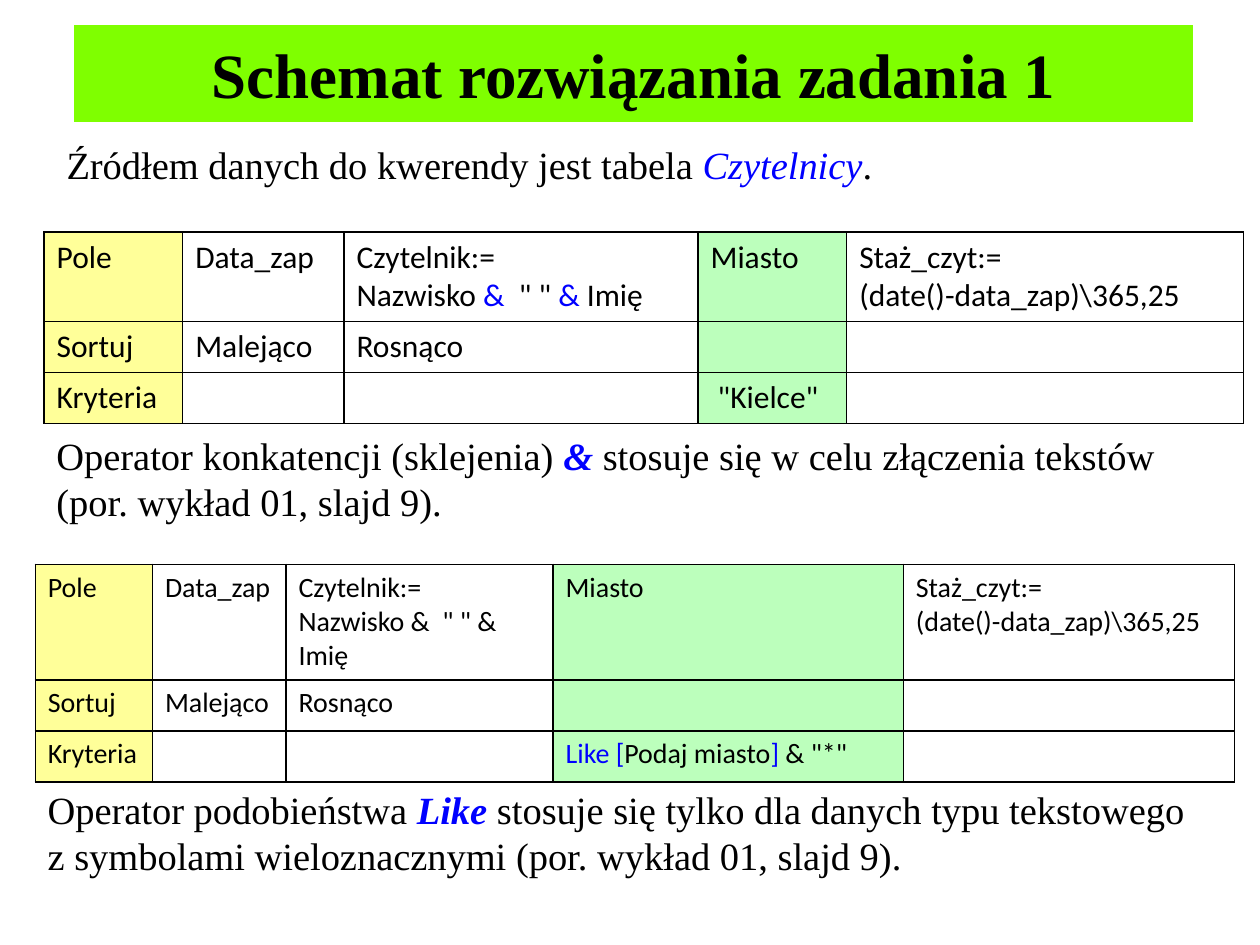
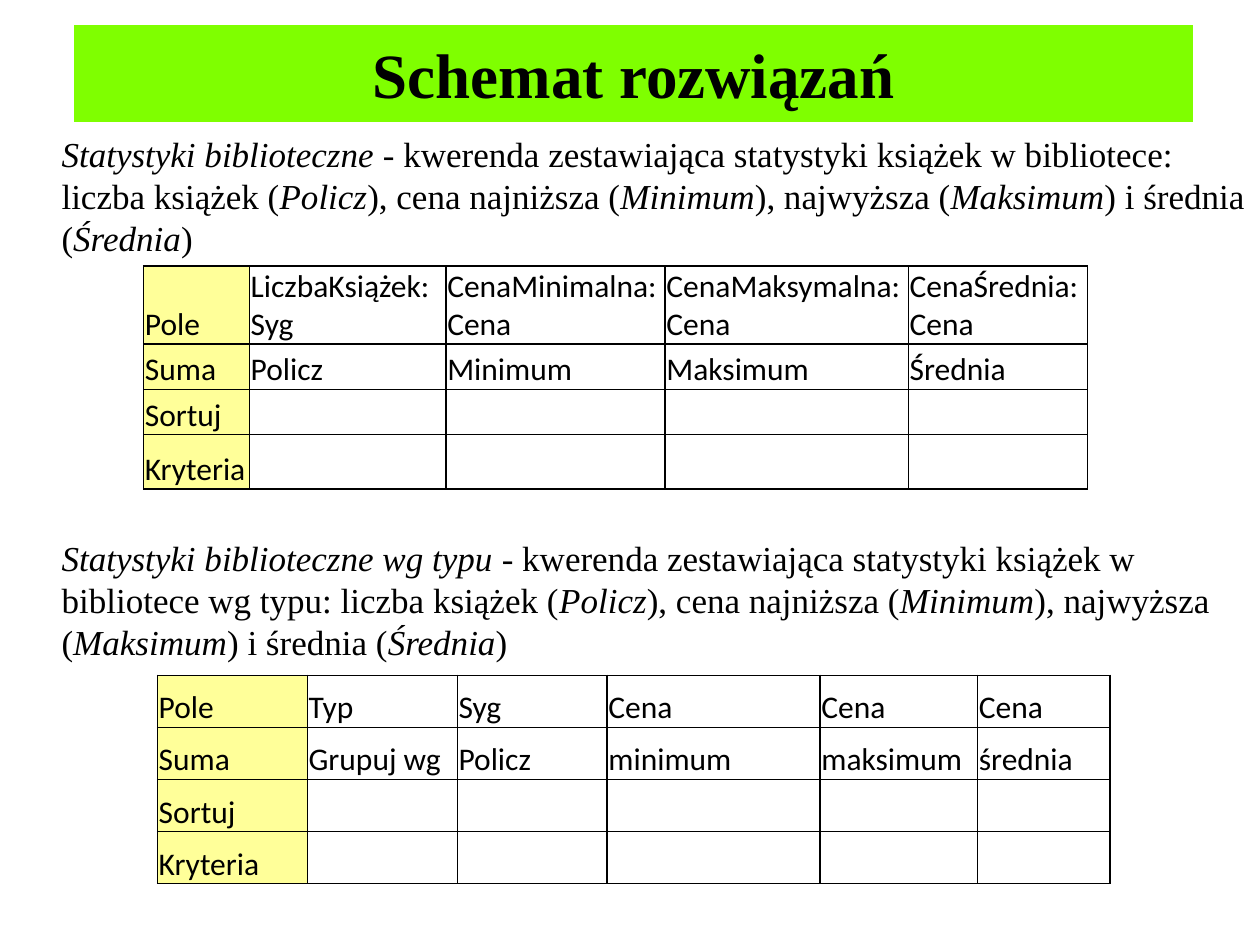
from lxml import etree
from pptx import Presentation, util as u
from pptx.dml.color import RGBColor
from pptx.enum import text
from pptx.oxml import ns

# Shared style
BLACK = RGBColor(0x00, 0x00, 0x00)
WHITE = RGBColor(0xFF, 0xFF, 0xFF)
BLUE = RGBColor(0x00, 0x00, 0xFF)
LIME = RGBColor(0x7F, 0xFF, 0x00)
YELLOW = RGBColor(0xFF, 0xFF, 0x99)
MINT = RGBColor(0xBC, 0xFF, 0xBC)

SERIF = "Times New Roman"
SANS = "Calibri"
TITLE_FONT = dict(name=SERIF, size=u.Pt(36), bold=True, color=BLACK)
ITALIC = dict(italic=True)
BLUE_ITALIC = dict(italic=True, color=BLUE)
BLUE_STRONG = dict(bold=True, italic=True, color=BLUE)
BLUE_PLAIN = dict(color=BLUE)
ROOMY = dict(vertical_anchor=text.MSO_ANCHOR.TOP)
TIGHT = dict(vertical_anchor=text.MSO_ANCHOR.BOTTOM, margin_left=u.Inches(0.01),
             margin_right=u.Inches(0.01), margin_top=u.Inches(0.01), margin_bottom=0)


def set_all(target, values):
    for name, value in values.items():
        setattr(target, name, value)


class Deck:
    """Lengths are columns and rows of a 100 by 75 grid on the slide."""
    COLUMNS, ROWS = 100, 75

    def __init__(self):
        self.deck = Presentation()
        set_all(self.deck, dict(slide_width=u.Inches(10), slide_height=u.Inches(7.5)))
        self.page = None

    def across(self, columns):
        return round(self.deck.slide_width * columns / self.COLUMNS)

    def down(self, rows):
        return round(self.deck.slide_height * rows / self.ROWS)

    def place(self, left, top, width, height):
        return self.across(left), self.down(top), self.across(width), self.down(height)

    def fill_text(self, frame, words, font, accent=None):
        """Fill a text frame; words between bars take the accent format."""
        for index, line in enumerate(words.split("\n")):
            para = frame.paragraphs[0] if index == 0 else frame.add_paragraph()
            for order, part in enumerate(line.split("|")):
                if part:
                    span = para.add_run()
                    span.text = part
                    look = {**font, **(accent if order % 2 else {})}
                    span.font.color.rgb = look.pop("color")
                    set_all(span.font, look)

    def add_page(self, title):
        self.page = self.deck.slides.add_slide(self.deck.slide_layouts[5])
        box = self.page.shapes.title
        set_all(box, dict(zip(("left", "top", "width", "height"),
                              self.place(5.6, 1.7, 89.4, 8.3))))
        box.fill.solid()
        box.fill.fore_color.rgb = LIME
        box.line.color.rgb = WHITE
        box.line.width = u.Pt(4)
        box.text_frame.vertical_anchor = text.MSO_ANCHOR.MIDDLE
        self.fill_text(box.text_frame, title, TITLE_FONT)
        box.text_frame.paragraphs[0].alignment = text.PP_ALIGN.CENTER

    def add_text(self, place, words, size, accent):
        box = self.page.shapes.add_textbox(*self.place(*place))
        set_all(box.text_frame, dict(word_wrap=True,
                                     auto_size=text.MSO_AUTO_SIZE.SHAPE_TO_FIT_TEXT))
        self.fill_text(box.text_frame, words,
                       dict(name=SERIF, size=u.Pt(size), color=BLACK), accent)

    def add_grid(self, corner, widths, heights, lines, size, layout, fills):
        """Add a query grid; fills maps a column number to its colour."""
        frame = self.page.shapes.add_table(
            len(heights), len(widths),
            *self.place(*corner, sum(widths), sum(heights)))
        table = frame.table
        set_all(table, dict(first_row=False, horz_banding=False))
        for column, width in zip(table.columns, widths):
            column.width = self.across(width)
        for row, height, line in zip(table.rows, heights, lines):
            row.height = self.down(height)
            for number, cell in enumerate(row.cells):
                set_all(cell, layout)
                cell.fill.solid()
                cell.fill.fore_color.rgb = fills.get(number, WHITE)
                self.add_borders(cell)
                words = line[number] if number < len(line) else ""
                self.fill_text(cell.text_frame, words,
                               dict(name=SANS, size=u.Pt(size), color=BLACK), BLUE_PLAIN)

    def add_borders(self, cell):
        properties = cell._tc.get_or_add_tcPr()
        for index, side in enumerate(("lnL", "lnR", "lnT", "lnB")):
            border = etree.Element(ns.qn(f"a:{side}"), w=str(u.Pt(1)))
            fill = etree.SubElement(border, ns.qn("a:solidFill"))
            etree.SubElement(fill, ns.qn("a:srgbClr"), val=str(BLACK))
            properties.insert(index, border)


def build_reader_query(show):
    show.add_page("Schemat rozwiązania zadania 1")
    fills = {0: YELLOW, 3: MINT}
    sorting = ["Sortuj", "Malejąco", "Rosnąco"]
    seniority = "Staż_czyt:=\n(date()-data_zap)\\365,25"

    # Query with a fixed town
    show.add_grid((3.5, 18.4), (11, 12.8, 28.1, 11.8, 31.5), (7.1, 4.05, 4.05), [
        ["Pole", "Data_zap", 'Czytelnik:=\nNazwisko |&|  " " |&| Imię', "Miasto", seniority],
        sorting,
        ["Kryteria", "", "", ' "Kielce"'],
    ], 18, ROOMY, fills)

    # Query that asks for the town
    show.add_grid((2.8, 44.8), (9.3, 10.6, 21.2, 27.8, 26.3), (9.1, 4.05, 4.05), [
        ["Pole", "Data_zap", 'Czytelnik:=\nNazwisko &  " " & Imię', "Miasto", seniority],
        sorting,
        ["Kryteria", "", "", '|Like [|Podaj miasto|]| & "*"'],
    ], 16, ROOMY, fills)

    # Explanations
    show.add_text((2.8, 61.9, 93.7, 8.4),
                  "Operator podobieństwa |Like| stosuje się tylko dla danych typu tekstowego "
                  "z symbolami wieloznacznymi (por. wykład 01, slajd 9).", 22, BLUE_STRONG)
    show.add_text((3.5, 33.8, 93.7, 8.4),
                  "Operator konkatencji (sklejenia) |& |stosuje się w celu złączenia tekstów "
                  "(por. wykład 01, slajd 9).", 22, BLUE_STRONG)
    show.add_text((4.3, 10.7, 90.6, 4.7),
                  "Źródłem danych do kwerendy jest tabela |Czytelnicy|.", 22, BLUE_ITALIC)


def build_statistics_queries(show):
    show.add_page("Schemat rozwiązań")
    fills = {0: YELLOW}
    measures = ("liczba książek (|Policz|), cena najniższa (|Minimum|), "
                "najwyższa (|Maksimum|) i średnia (|Średnia|)")

    # Statistics of the whole library
    show.add_grid((11.4, 21.1), (8.4, 15.6, 17.4, 19.3, 14.2), (6.2, 3.6, 3.6, 4.3), [
        ["Pole", "LiczbaKsiążek:\nSyg", "CenaMinimalna:\nCena",
         "CenaMaksymalna:\nCena", "CenaŚrednia:\nCena"],
        ["Suma", "Policz", "Minimum", "Maksimum", "Średnia"],
        ["Sortuj"],
        ["Kryteria"],
    ], 18, TIGHT, fills)

    # Statistics by type
    show.add_grid((12.5, 53.6), (11.9, 11.9, 11.9, 16.9, 12.5, 10.5), (4.13,) * 4, [
        ["Pole", "Typ", "Syg", "Cena", "Cena", "Cena"],
        ["Suma", "Grupuj wg", "Policz", "minimum", "maksimum", "średnia"],
        ["Sortuj"],
        ["Kryteria"],
    ], 18, TIGHT, fills)

    # Descriptions
    show.add_text((3.9, 10, 96.1, 11.1),
                  "|Statystyki biblioteczne |- kwerenda zestawiająca statystyki książek "
                  "w bibliotece:\n" + measures, 20, ITALIC)
    show.add_text((3.9, 42.1, 96.1, 11.1),
                  "|Statystyki biblioteczne wg typu |- kwerenda zestawiająca statystyki książek "
                  "w bibliotece wg typu: " + measures, 20, ITALIC)


def main():
    show = Deck()
    build_reader_query(show)
    build_statistics_queries(show)
    show.deck.save("out.pptx")


if __name__ == "__main__":
    main()
